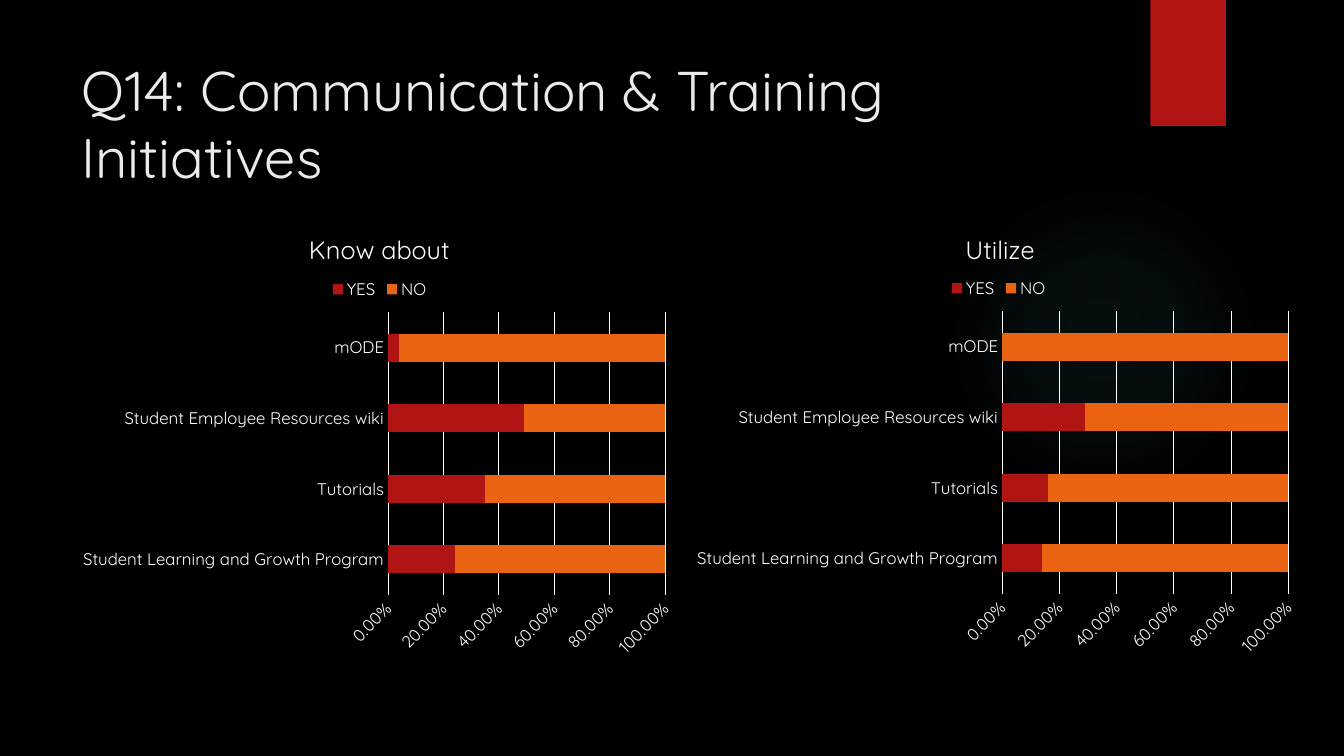
from lxml import etree
from pptx import Presentation
from pptx.chart.data import CategoryChartData
from pptx.dml.color import RGBColor
from pptx.enum.chart import XL_CHART_TYPE, XL_LEGEND_POSITION, XL_TICK_MARK
from pptx.enum.shapes import MSO_SHAPE
from pptx.enum.text import MSO_ANCHOR, PP_ALIGN
from pptx.oxml import parse_xml
from pptx.oxml.ns import nsdecls, qn
from pptx.util import Inches, Pt

BARS = XL_CHART_TYPE.BAR_STACKED
TOP = XL_LEGEND_POSITION.TOP
NO_TICK = XL_TICK_MARK.NONE
RECT = MSO_SHAPE.RECTANGLE
OVAL = MSO_SHAPE.OVAL
ANCHOR = MSO_ANCHOR.TOP
LEFT = PP_ALIGN.LEFT

FONT = "Quicksand"
WHITE, RED, ORANGE, TEAL = "FFFFFF", "B01513", "EA6312", "50B9C1"
CATS = ["Student Learning and Growth Program", "Tutorials",
        "Student Employee Resources wiki", "mODE"]


def color(code):
    return RGBColor.from_string(code)


def style(font, size, code=WHITE):
    font.name = FONT
    font.size = Pt(size)
    font.bold = False
    font.color.rgb = color(code)


def add_shape(slide, kind, box, code):
    shape = slide.shapes.add_shape(kind, *map(Inches, box))
    shape.shadow.inherit = False
    shape.fill.solid()
    shape.fill.fore_color.rgb = color(code)
    shape.line.fill.background()
    return shape


def add_glow(slide, box, stops):
    shape = add_shape(slide, OVAL, box, TEAL)
    marks = "".join(
        f'<a:gs pos="{pos * 1000}"><a:srgbClr val="{TEAL}">'
        f'<a:alpha val="{alpha * 1000}"/></a:srgbClr></a:gs>'
        for pos, alpha in stops)
    grad = parse_xml(
        f'<a:gradFill {nsdecls("a")}><a:gsLst>{marks}</a:gsLst>'
        '<a:path path="circle"><a:fillToRect l="50000" t="50000" '
        'r="50000" b="50000"/></a:path></a:gradFill>')
    props = shape.element.spPr
    props.replace(props.find(qn("a:solidFill")), grad)


def add_title(slide, text):
    title = slide.shapes.title
    title.left, title.top = Inches(0.71), Inches(0.5)
    title.width, title.height = Inches(10.29), Inches(0.88)
    frame = title.text_frame
    frame.word_wrap = True
    frame.vertical_anchor = ANCHOR
    para = frame.paragraphs[0]
    para.alignment = LEFT
    run = para.add_run()
    run.text = text
    style(run.font, 40, "EBEBEB")


def place(part, box, spot, inner=False):
    """Set the layout of a chart part; spot is in inches on the slide."""
    left, top, width, height = box
    parts = [("xMode", "edge"), ("yMode", "edge"),
             ("x", (spot[0] - left) / width), ("y", (spot[1] - top) / height)]
    if len(spot) == 4:
        parts += [("w", spot[2] / width), ("h", spot[3] / height)]
    if inner:
        parts.insert(0, ("layoutTarget", "inner"))
    old = part.find(qn("c:layout"))
    if old is not None:
        part.remove(old)
    layout = etree.Element(qn("c:layout"))
    manual = etree.SubElement(layout, qn("c:manualLayout"))
    for tag, val in parts:
        etree.SubElement(manual, qn("c:" + tag)).set("val", str(val))
    # Layout follows the title text or legend position; it leads the plot
    lead = [c for c in part if c.tag in (qn("c:tx"), qn("c:legendPos"))]
    part.insert(len(lead), layout)


def add_bars(slide, name, box, yes, no, head, key, plot):
    data = CategoryChartData(number_format="0.00%")
    data.categories = CATS
    data.add_series("YES", yes)
    data.add_series("NO", no)
    chart = slide.shapes.add_chart(BARS, *map(Inches, box), data).chart
    style(chart.font, 10)

    # Title and legend
    chart.has_title = True
    run = chart.chart_title.text_frame.paragraphs[0].add_run()
    run.text = name
    style(run.font, 18)
    chart.chart_title.include_in_layout = False
    chart.has_legend = True
    chart.legend.position = TOP
    chart.legend.include_in_layout = False
    style(chart.legend.font, 12)

    # Bars
    bars = chart.plots[0]
    bars.gap_width, bars.overlap = 150, 100
    bars.vary_by_categories = False
    for series, code in zip(bars.series, (RED, ORANGE)):
        series.format.fill.solid()
        series.format.fill.fore_color.rgb = color(code)

    # Axes
    cat, val = chart.category_axis, chart.value_axis
    for axis in (cat, val):
        axis.major_tick_mark = axis.minor_tick_mark = NO_TICK
        style(axis.tick_labels.font, 12)
    val.minimum_scale, val.maximum_scale, val.major_unit = 0, 1, 0.2
    val.tick_labels.number_format = "0.00%"
    val.tick_labels.number_format_is_linked = False
    val._element.find(qn("c:txPr")).find(qn("a:bodyPr")).set("rot", "-2700000")
    val.format.line.fill.background()
    for line in (cat.format.line, val.major_gridlines.format.line):
        line.color.rgb = color(WHITE)
        line.width = Pt(0.75)

    # Places of the parts
    place(chart.chart_title._element, box, head)
    place(chart.legend._element, box, key)
    place(chart._chartSpace.chart.plotArea, box, plot, inner=True)


def main():
    prs = Presentation()
    prs.slide_width, prs.slide_height = Inches(13.33), Inches(7.5)
    slide = prs.slides.add_slide(prs.slide_layouts[5])
    slide.background.fill.solid()
    slide.background.fill.fore_color.rgb = color("000000")

    # Backdrop
    add_glow(slide, (9.41, 1.83, 3.08, 3.08), [(0, 7), (36, 6), (69, 0)])
    add_shape(slide, RECT, (11.41, 0, 0.75, 1.25), RED)

    # Content
    add_title(slide, "Q14: Communication & Training Initiatives")
    add_bars(slide, "Know about", (0.71, 2.03, 6.1, 4.59),
             (0.24, 0.35, 0.49, 0.04), (0.76, 0.65, 0.51, 0.96),
             (3.02, 2.25), (3.24, 2.75, 1.05, 0.24), (3.85, 3.1, 2.75, 2.8))
    add_bars(slide, "Utilize", (6.8, 2.02, 6.18, 4.59),
             (0.14, 0.16, 0.29, None), (0.86, 0.84, 0.71, 1),
             (9.53, 2.25), (9.38, 2.74, 1.05, 0.24), (9.94, 3.09, 2.84, 2.8))
    prs.save("out.pptx")


if __name__ == "__main__":
    main()
